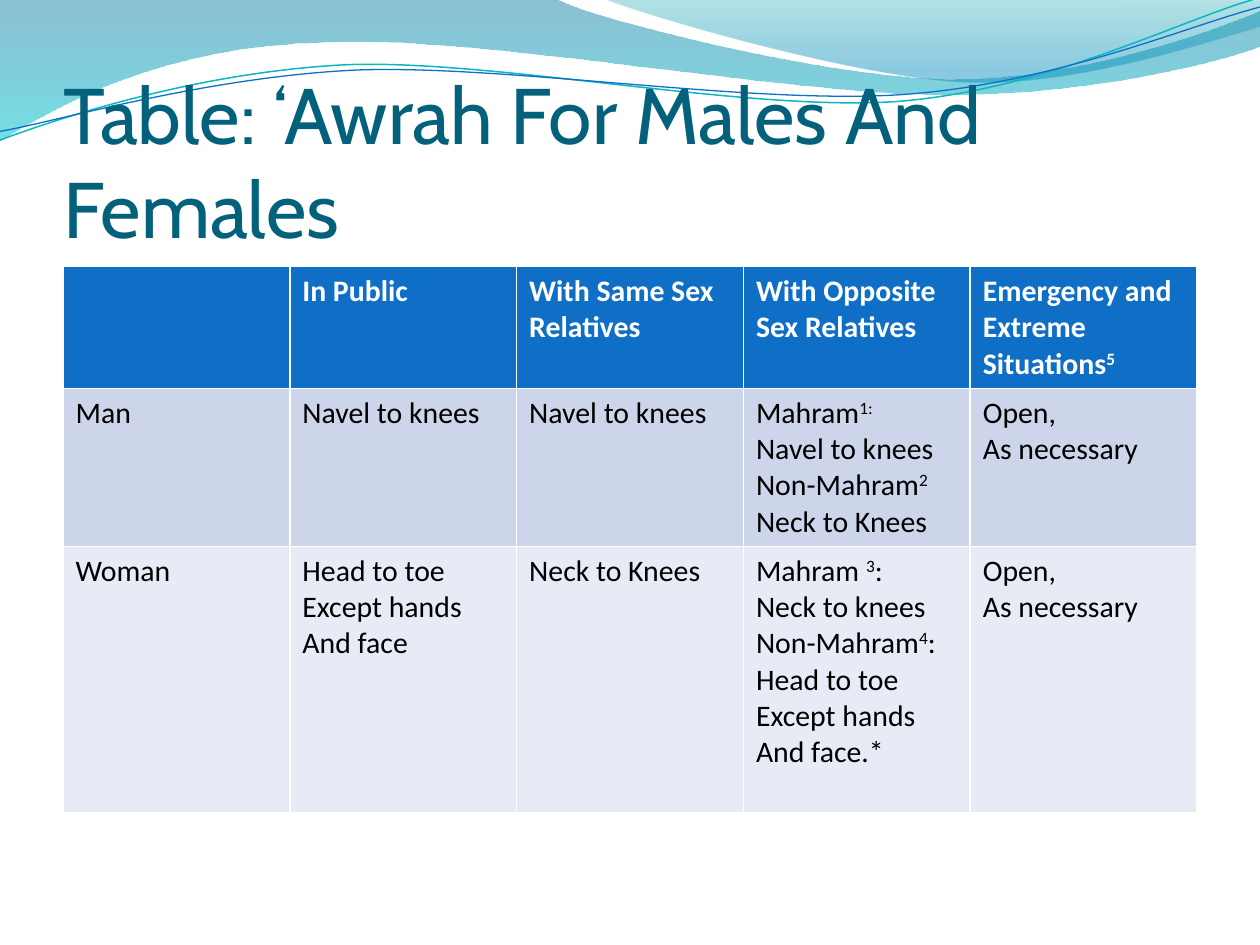
import pptx
import pptx.dml.color
import pptx.enum.text
import pptx.oxml.ns
import pptx.util
from lxml import etree

Pt = pptx.util.Pt
qn = pptx.oxml.ns.qn

COLORS = {
    "title": "04617B", "header": "0F6FC6", "man": "CCD5EA", "woman": "E7EBF5",
    "white": "FFFFFF", "black": "000000", "teal": "0AB8BF",
    "deep_blue": "0074A1", "cyan": "00C6CF", "sea": "00A1A9", "sky": "008BBF",
}

LEFT_WAVE = [
    (0, 0), (317, -1), (343, 12, 478, 45, 546, 45), (614, 45, 690, 19, 720, 6),
    (721, 26), (708, 32, 626, 55, 537, 54), (448, 54, 275, 20, 185, 24),
    (93, 26, 33, 60, -1, 81), (0, 0),
]
RIGHT_WAVE = [
    (345, -1), (366, 8, 491, 45, 554, 47), (616, 49, 692, 23, 720, 15),
    (720, 0), (345, -1),
]
TEAL_LINE = [
    (-1.4, 63.1), (34.2, 51.7, 114.3, 29.4, 199.4, 29.4),
    (284.4, 30.5, 425.8, 67.2, 512, 65.2), (599.2, 62.3, 676.1, 25.9, 720.6, 15.9),
]
BLUE_LINE = [
    (-1.1, 58.1), (33.2, 53.7, 118.2, 32.6, 204.3, 32.7),
    (290.3, 33.7, 429.1, 63.3, 515.3, 61.4), (601.5, 59.4, 678.9, 30, 721.4, 21),
]
LINE_ROTATION = 357.3

COLUMN_WIDTH = 129.6
ROWS = [
    ("header", 69.4, ["", "In Public", "With Same Sex Relatives",
                      "With Opposite Sex Relatives",
                      "Emergency and Extreme Situations^5^"]),
    ("man", 90.2, ["Man", "Navel to knees", "Navel to knees",
                   "Mahram^1:^\nNavel to knees\nNon-Mahram^2^\nNeck to Knees",
                   "Open,\nAs necessary"]),
    ("woman", 152.4, ["Woman", "Head to toe\nExcept hands\nAnd face", "Neck to Knees",
                      "Mahram ^3^:\nNeck to knees\nNon-Mahram^4^:\n"
                      "Head to toe\nExcept hands\nAnd face.*",
                      "Open,\nAs necessary"]),
]


def color(name):
    return pptx.dml.color.RGBColor.from_string(COLORS[name])


def style_font(font, name, size, color_name, bold=False):
    font.name = name
    font.size = Pt(size)
    font.bold = bold
    font.color.rgb = color(color_name)


def add_outline(slide, segments, close):
    start, *rest = segments
    points = [(Pt(segment[i]), Pt(segment[i + 1]))
              for segment in rest for i in range(0, len(segment), 2)]
    builder = slide.shapes.build_freeform(Pt(start[0]), Pt(start[1]), scale=1.0)
    builder.add_line_segments(points, close=close)
    shape = builder.convert_to_shape()
    shape.shadow.inherit = False
    steps = iter(list(shape._element.iter(qn("a:lnTo"))))
    for segment in rest:
        step = next(steps)
        if len(segment) == 6:
            step.addprevious(curve := etree.Element(qn("a:cubicBezTo")))
            for part in (step, next(steps), next(steps)):
                curve.append(part[0])
                part.getparent().remove(part)
    return shape


def add_wave(slide, segments, stops):
    shape = add_outline(slide, segments, True)
    shape.line.fill.background()
    shape.fill.gradient()
    shape.fill.gradient_angle = 270
    for stop, (position, color_name, opacity) in zip(shape.fill.gradient_stops, stops):
        stop.position = position
        stop.color.rgb = color(color_name)
        fill_color = shape._element.find(f".//{qn('a:srgbClr')}[@val='{COLORS[color_name]}']")
        etree.SubElement(fill_color, qn("a:alpha"), val=str(opacity * 1000))


def add_curve(slide, segments, color_name, width):
    shape = add_outline(slide, segments, False)
    shape.rotation = LINE_ROTATION
    shape.fill.background()
    shape.line.color.rgb = color(color_name)
    shape.line.width = Pt(width)


def place_title(slide, text):
    title = slide.shapes.title
    slide.shapes._spTree.append(title._element)
    title.left, title.top, title.width, title.height = Pt(36), Pt(55.4), Pt(648), Pt(90)
    frame = title.text_frame
    frame.text = text
    frame.word_wrap = True
    frame.auto_size = pptx.enum.text.MSO_AUTO_SIZE.NONE
    frame.vertical_anchor = pptx.enum.text.MSO_ANCHOR.BOTTOM
    frame.margin_left = frame.margin_right = frame.margin_bottom = 0
    frame.margin_top = Pt(3.6)
    paragraph = frame.paragraphs[0]
    paragraph.alignment = pptx.enum.text.PP_ALIGN.LEFT
    style_font(paragraph.font, "Cabin", 45, "title")


def write_cell(cell, text, is_header):
    frame = cell.text_frame
    for index, line in enumerate(text.split("\n")):
        paragraph = frame.add_paragraph() if index else frame.paragraphs[0]
        style_font(paragraph.font, "Calibri", 17, "white" if is_header else "black", is_header)
        for part_index, part in enumerate(line.split("^")):
            if part:
                run = paragraph.add_run()
                run.text = part
                if part_index % 2:
                    run._r.get_or_add_rPr().set("baseline", "30000")


def add_awrah_table(slide):
    columns = len(ROWS[0][2])
    height = sum(row[1] for row in ROWS)
    table = slide.shapes.add_table(
        len(ROWS), columns, Pt(36), Pt(152.4), Pt(columns * COLUMN_WIDTH), Pt(height)).table
    for row_index, (fill_name, row_height, texts) in enumerate(ROWS):
        table.rows[row_index].height = Pt(row_height)
        for column_index, text in enumerate(texts):
            cell = table.cell(row_index, column_index)
            write_cell(cell, text, row_index == 0)
            cell.fill.solid()
            cell.fill.fore_color.rgb = color(fill_name)


def main():
    presentation = pptx.Presentation()
    presentation.slide_width, presentation.slide_height = Pt(720), Pt(540)
    slide = presentation.slides.add_slide(presentation.slide_layouts[5])
    add_wave(slide, LEFT_WAVE, [(0, "deep_blue", 45), (1, "cyan", 55)])
    add_wave(slide, RIGHT_WAVE, [(0, "sea", 30), (0.8, "sky", 45)])
    add_curve(slide, TEAL_LINE, "teal", 0.85)
    add_curve(slide, BLUE_LINE, "header", 0.75)
    place_title(slide, "Table: ‘Awrah For Males And Females")
    add_awrah_table(slide)
    presentation.save("out.pptx")


if __name__ == "__main__":
    main()
